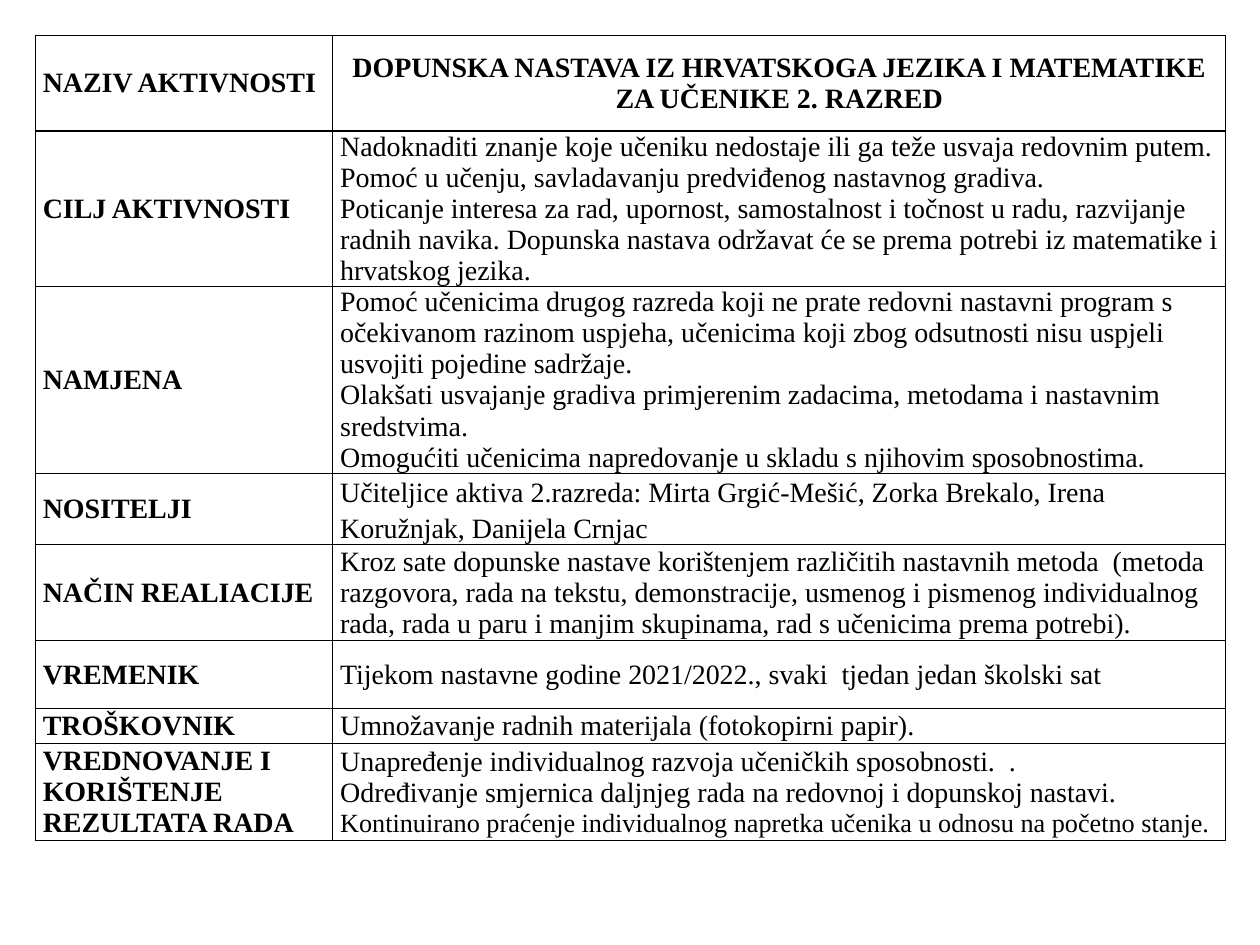
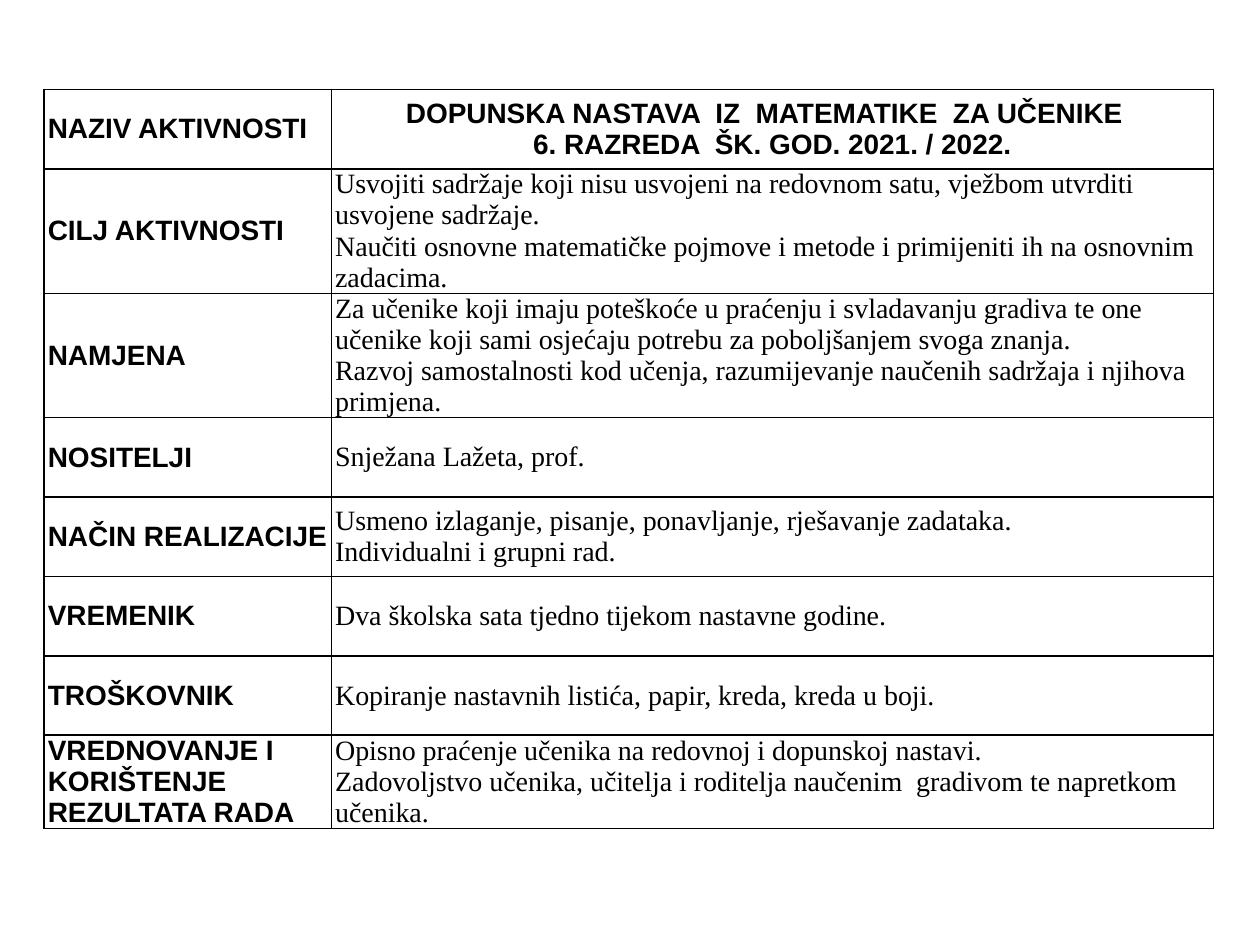
"""Build two slides, each with a table that plans extra lessons."""
from lxml import etree
from pptx import Presentation
from pptx.dml.color import RGBColor
from pptx.enum.text import MSO_ANCHOR, PP_ALIGN
from pptx.oxml.ns import qn
from pptx.util import Inches, Pt

BLACK = RGBColor(0, 0, 0)
SERIF, SANS = "Times New Roman", "Arial"
CENTER, LEFT, MIDDLE = PP_ALIGN.CENTER, PP_ALIGN.LEFT, MSO_ANCHOR.MIDDLE
BLANK = 6

PLANS = [
    {
        "left": 0.28, "top": 0.28, "cols": (2.36, 7.09),
        "pad": 0.06, "line": 0.75, "head": SERIF,
        "sizes": {(7, 2): 15}, "spaces": {3: 1.15},
        "rows": [
            (0.76, "NAZIV AKTIVNOSTI", [
                "DOPUNSKA NASTAVA IZ HRVATSKOGA JEZIKA I MATEMATIKE ZA UČENIKE 2. RAZRED"]),
            (0.83, "CILJ AKTIVNOSTI", [
                "Nadoknaditi znanje koje učeniku nedostaje ili ga teže usvaja redovnim putem. "
                "Pomoć u učenju, savladavanju predviđenog nastavnog gradiva.",
                "Poticanje interesa za rad, upornost, samostalnost i točnost u radu, razvijanje "
                "radnih navika. Dopunska nastava održavat će se prema potrebi iz matematike i "
                "hrvatskog jezika."]),
            (1.22, "NAMJENA", [
                "Pomoć učenicima drugog razreda koji ne prate redovni nastavni program s "
                "očekivanom razinom uspjeha, učenicima koji zbog odsutnosti nisu uspjeli "
                "usvojiti pojedine sadržaje.",
                "Olakšati usvajanje gradiva primjerenim zadacima, metodama i nastavnim sredstvima.",
                "Omogućiti učenicima napredovanje u skladu s njihovim sposobnostima."]),
            (0.37, "NOSITELJI", [
                "Učiteljice aktiva 2.razreda: Mirta Grgić-Mešić, Zorka Brekalo, Irena "
                "Koružnjak, Danijela Crnjac"]),
            (0.76, "NAČIN REALIACIJE", [
                "Kroz sate dopunske nastave korištenjem različitih nastavnih metoda "
                " (metoda razgovora, rada na tekstu, demonstracije, usmenog i pismenog "
                "individualnog rada, rada u paru i manjim skupinama, rad s učenicima prema "
                "potrebi)."]),
            (0.54, "VREMENIK", [
                "Tijekom nastavne godine 2021/2022., svaki  tjedan jedan školski sat"]),
            (0.28, "TROŠKOVNIK", ["Umnožavanje radnih materijala (fotokopirni papir)."]),
            (0.77, "VREDNOVANJE I KORIŠTENJE REZULTATA RADA", [
                "Unapređenje individualnog razvoja učeničkih sposobnosti.  .",
                "Određivanje smjernica daljnjeg rada na redovnoj i dopunskoj nastavi.",
                "Kontinuirano praćenje individualnog napretka učenika u odnosu na početno stanje."]),
        ],
    },
    {
        "left": 0.35, "top": 0.71, "cols": (2.28, 7),
        "pad": 0.03, "line": 1, "head": SANS, "sizes": {}, "spaces": {},
        "rows": [
            (0.63, "NAZIV AKTIVNOSTI", [
                "DOPUNSKA NASTAVA  IZ  MATEMATIKE  ZA UČENIKE  ",
                "6. RAZREDA  ŠK. GOD. 2021. / 2022."]),
            (0.93, "CILJ AKTIVNOSTI", [
                "Usvojiti sadržaje koji nisu usvojeni na redovnom satu, vježbom utvrditi "
                "usvojene sadržaje.",
                "Naučiti osnovne matematičke pojmove i metode i primijeniti ih na osnovnim "
                "zadacima."]),
            (0.93, "NAMJENA", [
                "Za učenike koji imaju poteškoće u praćenju i svladavanju gradiva te one "
                "učenike koji sami osjećaju potrebu za poboljšanjem svoga znanja.",
                "Razvoj samostalnosti kod učenja, razumijevanje naučenih sadržaja i njihova "
                "primjena."]),
            (0.63, "NOSITELJI", ["Snježana Lažeta, prof."]),
            (0.63, "NAČIN REALIZACIJE", [
                "Usmeno izlaganje, pisanje, ponavljanje, rješavanje zadataka.",
                "Individualni i grupni rad."]),
            (0.63, "VREMENIK", ["Dva školska sata tjedno tijekom nastavne godine."]),
            (0.63, "TROŠKOVNIK", ["Kopiranje nastavnih listića, papir, kreda, kreda u boji."]),
            (0.7, "VREDNOVANJE I KORIŠTENJE REZULTATA RADA", [
                "Opisno praćenje učenika na redovnoj i dopunskoj nastavi.",
                "Zadovoljstvo učenika, učitelja i roditelja naučenim  gradivom te napretkom "
                "učenika."]),
        ],
    },
]


def assign(item, values):
    for name, value in values.items():
        setattr(item, name, value)


def frame(cell, width):
    props = cell._tc.get_or_add_tcPr()
    for side in ("lnL", "lnR", "lnT", "lnB"):
        line = etree.SubElement(props, qn(f"a:{side}"), w=str(Pt(width)))
        fill = etree.SubElement(line, qn("a:solidFill"))
        etree.SubElement(fill, qn("a:srgbClr"), val=str(BLACK))
    cell.fill.background()


def write(cell, texts, font, align=LEFT, space=None, sizes=()):
    for i, text in enumerate(texts):
        body = cell.text_frame
        para = body.add_paragraph() if i else body.paragraphs[0]
        assign(para, {"alignment": align, "line_spacing": space})
        run = para.add_run()
        run.text = text
        assign(run.font, {**font, "size": Pt(sizes[i])})
        run.font.color.rgb = BLACK


def draw(slide, plan):
    rows, cols = plan["rows"], plan["cols"]
    high = sum(row[0] for row in rows)
    box = map(Inches, (plan["left"], plan["top"], sum(cols), high))
    table = slide.shapes.add_table(len(rows), len(cols), *box).table
    assign(table, {"first_row": False, "horz_banding": False})
    for col, width in zip(table.columns, cols):
        col.width = Inches(width)
    pad = Inches(plan["pad"])
    form = {"vertical_anchor": MIDDLE, "margin_left": pad, "margin_right": pad,
            "margin_top": 0, "margin_bottom": 0}
    bold = {"name": plan["head"], "bold": True}
    plain = {"name": SERIF, "bold": False}
    for r, (height, label, texts) in enumerate(rows):
        table.rows[r].height = Inches(height)
        for c, parts in enumerate(([label], texts)):
            cell = table.cell(r, c)
            assign(cell, form)
            frame(cell, plan["line"])
            sizes = [plan["sizes"].get((r, i), 16) for i in range(len(parts))]
            write(cell, parts, plain if r and c else bold,
                  CENTER if c and not r else LEFT,
                  plan["spaces"].get(r) if c else None, sizes)


def main():
    deck = Presentation()
    assign(deck, {"slide_width": Inches(10), "slide_height": Inches(7.5)})
    for plan in PLANS:
        draw(deck.slides.add_slide(deck.slide_layouts[BLANK]), plan)
    deck.save("out.pptx")


if __name__ == "__main__":
    main()
